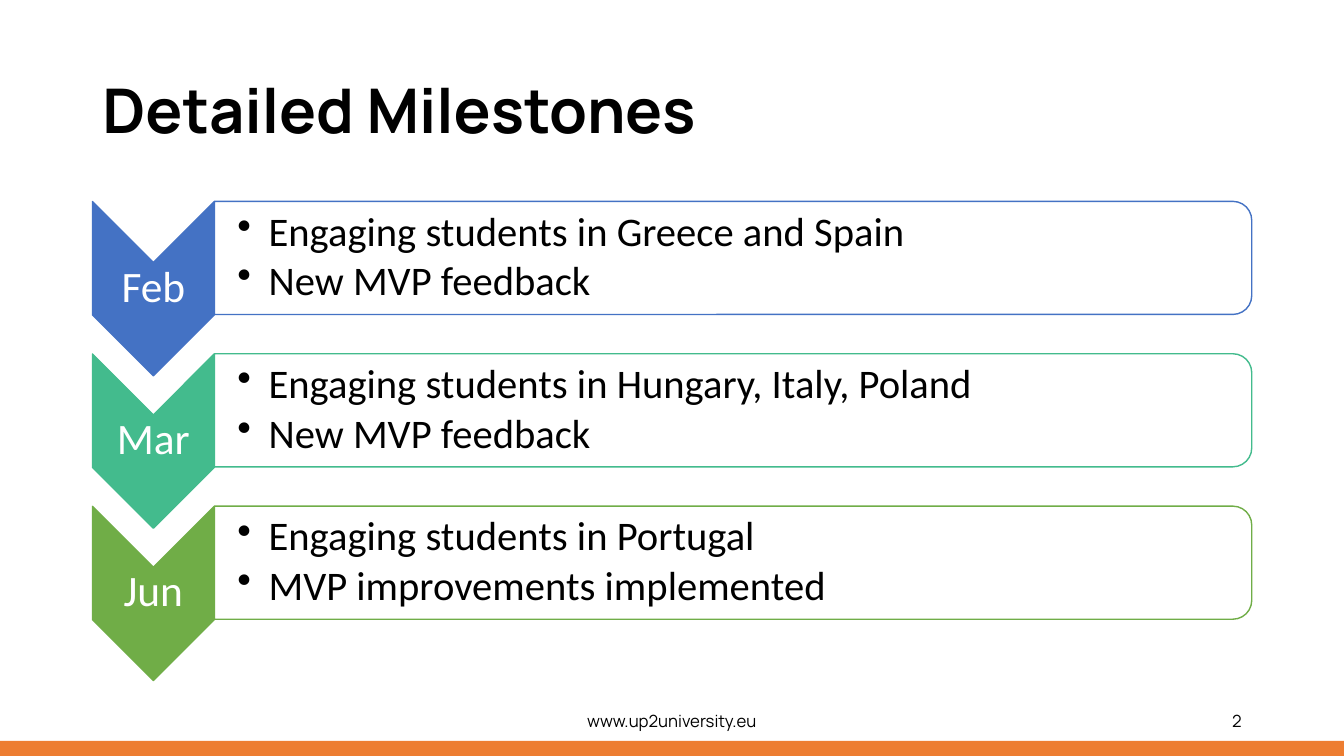
"""Build the "Detailed Milestones" slide: three months with their goals."""
from lxml import etree
from pptx import Presentation
from pptx.dml.color import RGBColor
from pptx.enum.shapes import MSO_SHAPE
from pptx.enum.text import MSO_ANCHOR, PP_ALIGN
from pptx.oxml.ns import qn
from pptx.util import Cm, Pt

RECT = MSO_SHAPE.RECTANGLE
CHEVRON = MSO_SHAPE.CHEVRON
BAR = MSO_SHAPE.ROUND_2_SAME_RECTANGLE
MIDDLE = MSO_ANCHOR.MIDDLE
LEFT, CENTER, RIGHT = PP_ALIGN.LEFT, PP_ALIGN.CENTER, PP_ALIGN.RIGHT

MILESTONES = [
    ("Feb", "4472C4", ["Engaging students in Greece and Spain", "New MVP feedback"]),
    ("Mar", "43BB8D", ["Engaging students in Hungary, Italy, Poland", "New MVP feedback"]),
    ("Jun", "70AD47", ["Engaging students in Portugal", "MVP improvements implemented"]),
]
PITCH = 3.84


def add_shape(kind, box, fill, line=None, rotation=0):
    s = slide.shapes.add_shape(kind, *[Cm(v) for v in box])
    s.shadow.inherit = False
    s.rotation = rotation
    s.fill.solid()
    s.fill.fore_color.rgb = RGBColor.from_string(fill)
    if line:
        s.line.color.rgb = RGBColor.from_string(line)
        s.line.width = Pt(1)
    else:
        s.line.fill.background()
    return s


def add_text(box, lines, font, size, color="000000", align=LEFT, bold=False,
             insets=(0.25, 0.13), spacing=1.0, bullets=False):
    tf = slide.shapes.add_textbox(*[Cm(v) for v in box]).text_frame
    tf.word_wrap = True
    tf.vertical_anchor = MIDDLE
    tf.margin_left = Cm(insets[0])
    tf.margin_right = Cm(min(insets[0], 0.25) if not bullets else insets[1])
    tf.margin_top = tf.margin_bottom = Cm(insets[1])
    for i, line in enumerate(lines):
        p = tf.paragraphs[0] if i == 0 else tf.add_paragraph()
        if bullets:
            pPr = p._p.get_or_add_pPr()
            pPr.set("marL", str(Cm(0.79)))
            pPr.set("indent", str(-Cm(0.79)))
            etree.SubElement(pPr, qn("a:buChar")).set("char", "•")
        p.alignment = align
        p.line_spacing = spacing
        if i > 0:
            p.space_before = Pt(4)
        r = p.add_run()
        r.text = line
        r.font.name = font
        r.font.size = Pt(size)
        r.font.bold = bold
        r.font.color.rgb = RGBColor.from_string(color)


prs = Presentation()
prs.slide_width, prs.slide_height = Cm(33.87), Cm(19.05)
slide = prs.slides.add_slide(prs.slide_layouts[6])

add_shape(RECT, (0, 18.67, 33.87, 0.38), "ED7D31")
add_text((2.33, 1.02, 25.6, 3.68), ["Detailed Milestones"], "Manrope", 44,
         bold=True, spacing=0.9)

for i, (month, color, goals) in enumerate(MILESTONES):
    dy = i * PITCH
    add_shape(CHEVRON, (1.67, 5.74 + dy, 4.39, 3.07), color, color, 90)
    add_text((2.33, 6.6 + dy, 3.07, 1.32), [month], "Calibri", 31, "FFFFFF",
             CENTER, insets=(0.05, 0.05), spacing=0.9)
    bar = add_shape(BAR, (17.05, -6.57 + dy, 2.85, 26.14), "FFFFFF", color, 90)
    white = bar.fill._xPr.find(qn("a:solidFill"))[0]
    etree.SubElement(white, qn("a:alpha")).set("val", "90000")
    add_text((5.4, 5.21 + dy, 26, 2.57), goals, "Calibri", 29,
             insets=(0.58, 0.05), spacing=0.9, bullets=True)

add_text((11.22, 17.65, 11.43, 1.02), ["www.up2university.eu"], "Manrope", 12, align=CENTER)
add_text((23.92, 17.65, 7.62, 1.02), ["2"], "Manrope", 12, align=RIGHT)

prs.save("out.pptx")
